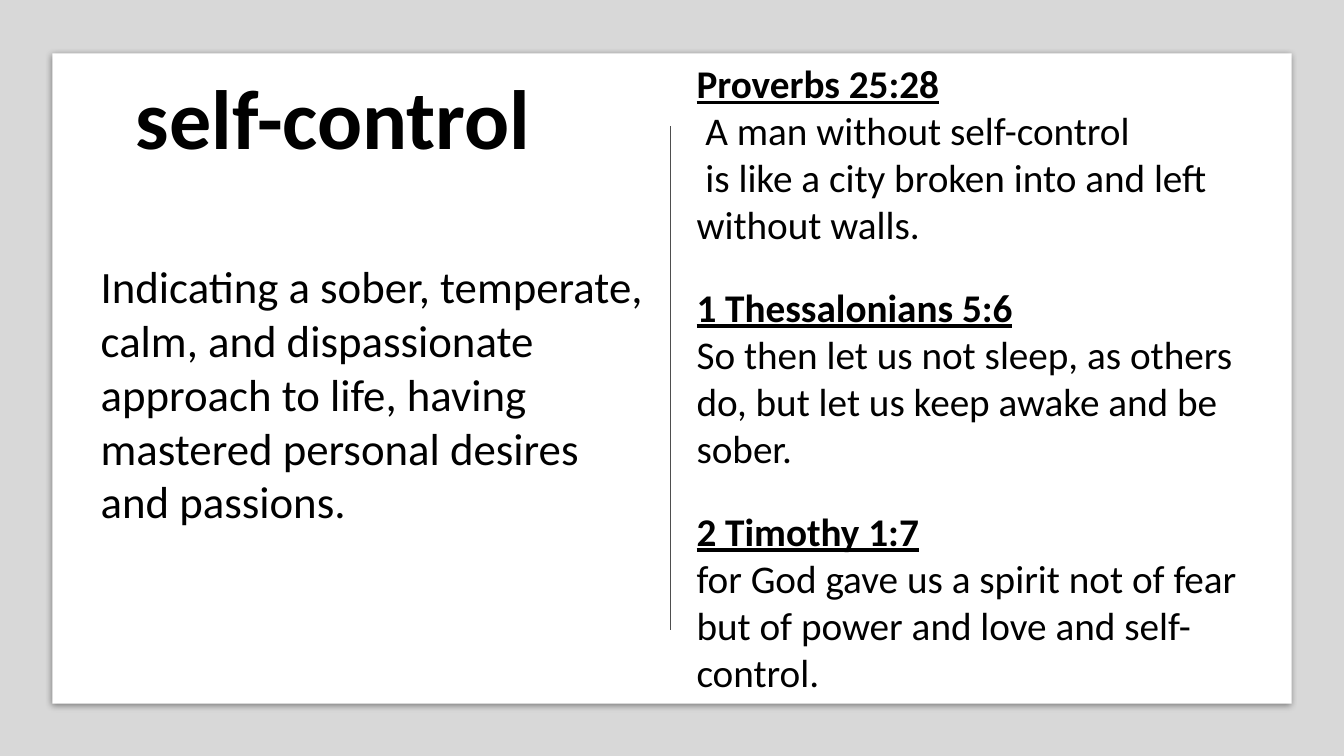
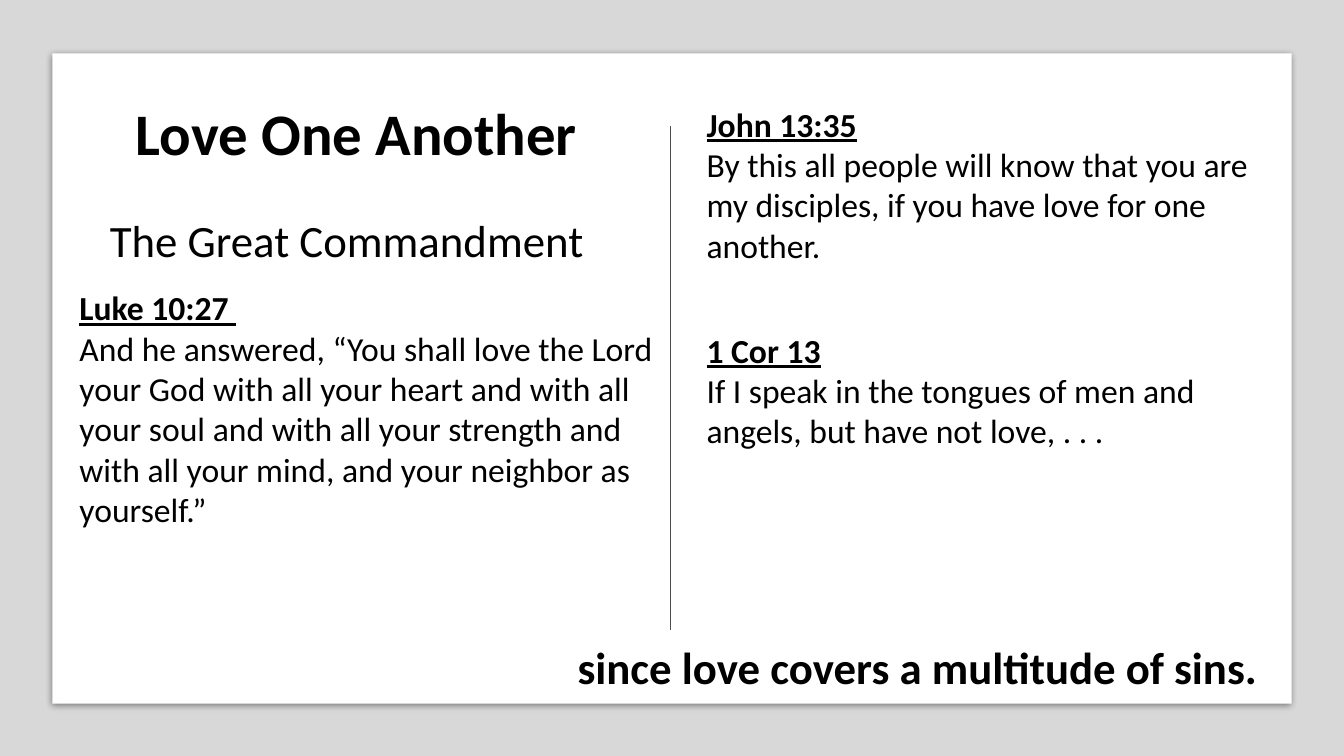
from lxml import etree
from pptx import Presentation
from pptx.dml.color import RGBColor
from pptx.enum import shapes, text
from pptx.oxml import parse_xml
from pptx.oxml.ns import nsdecls, qn
from pptx.util import Pt

PX = 9144  # 100 px to the inch
BLACK, WHITE, GRAY, RULE = "000000", "FFFFFF", "808080", "4E4E4E"
HEAD = {"bold": True, "underline": True}
BOLD = {"bold": True}
PLAIN = {}
SHADE = (
    f'<a:effectLst {nsdecls("a")}><a:outerShdw blurRad="63500" dist="17780" '
    'dir="5400000" rotWithShape="0"><a:srgbClr val="000000">'
    '<a:alpha val="43000"/></a:srgbClr></a:outerShdw></a:effectLst>'
)


def color(code):
    return RGBColor.from_string(code)


def write(slide, box, size, paras, title=False, line=1.0):
    """Add a text box; paras holds (words, font style) pairs."""
    area = slide.shapes.add_textbox(*(n * PX for n in box))
    frame = area.text_frame
    frame.word_wrap = True
    frame.auto_size = (text.MSO_AUTO_SIZE.NONE if title
                       else text.MSO_AUTO_SIZE.SHAPE_TO_FIT_TEXT)
    if title:
        frame.vertical_anchor = text.MSO_ANCHOR.BOTTOM
    for i, (words, style) in enumerate(paras):
        para = frame.paragraphs[0] if i == 0 else frame.add_paragraph()
        para.text = words
        if title:
            para.line_spacing, para.space_after = line, Pt(6)
        for run in para.runs:
            looks = {"name": "Calibri", "size": Pt(size), **style}
            for key, val in looks.items():
                setattr(run.font, key, val)
            run.font.color.rgb = color(BLACK)


# Content: title (words, size, line spacing), notes (box, size, words, style),
# verses (box, size, reference, words)
pages = [
    {
        "title": ("self-control", 60, 0.8),
        "notes": [
            ((90, 252, 559, 279), 32,
             "Indicating a sober, temperate, calm, and dispassionate approach "
             "to life, having mastered personal desires and passions.", PLAIN),
        ],
        "verses": [
            ((681, 54 + 222 * i, 581, 199), 28, ref, words)
            for i, (ref, words) in enumerate([
                ("Proverbs 25:28",
                 " A man without self-control\v is like a city broken into "
                 "and left without walls."),
                ("1 Thessalonians 5:6",
                 "So then let us not sleep, as others do, but let us keep "
                 "awake and be sober."),
                ("2 Timothy 1:7",
                 "for God gave us a spirit not of fear but of power and love "
                 "and self-control."),
            ])
        ],
    },
    {
        "title": ("Love One Another", 42, 0.7),
        "notes": [
            ((99, 206, 559, 64), 32, "The Great Commandment", PLAIN),
            ((563, 630, 718, 64), 32,
             "since love covers a multitude of sins.", BOLD),
        ],
        "verses": [
            ((69, 280, 596, 252), 24, "Luke 10:27 ",
             "And he answered, “You shall love the Lord your God with all "
             "your heart and with all your soul and with all your strength "
             "and with all your mind, and your neighbor as yourself.”"),
            ((691, 98, 563, 172), 24, "John 13:35",
             "By this all people will know that you are my disciples, if you "
             "have love for one another."),
            ((691, 322, 563, 131), 24, "1 Cor 13",
             "If I speak in the tongues of men and angels, but have not "
             "love, . . ."),
        ],
    },
]

deck = Presentation()
deck.slide_width, deck.slide_height = 1333 * PX, 750 * PX

for page in pages:
    slide = deck.slides.add_slide(deck.slide_layouts[6])

    # Gray backdrop and white card
    panels = []
    for box, fill in (((0, 0, 1333, 750), GRAY), ((52, 53, 1229, 645), WHITE)):
        panel = slide.shapes.add_shape(
            shapes.MSO_SHAPE.RECTANGLE, *(n * PX for n in box))
        panel.fill.solid()
        panel.fill.fore_color.rgb = color(fill)
        panel.line.fill.background()
        panel.shadow.inherit = False
        panels.append(panel)
    back, card = panels
    tint = back.fill._xPr.find(qn("a:solidFill"))[0]
    etree.SubElement(tint, qn("a:alpha")).set("val", "30000")
    props = card._element.spPr
    props.replace(props.find(qn("a:effectLst")), parse_xml(SHADE))

    # Middle rule
    rule = slide.shapes.add_connector(
        shapes.MSO_CONNECTOR.STRAIGHT, 665 * PX, 125 * PX, 665 * PX, 625 * PX)
    rule.line.color.rgb = color(RULE)
    rule.line.width = Pt(0.5)
    etree.SubElement(rule._element.spPr, qn("a:effectLst"))

    # Title, notes and verses
    words, size, line = page["title"]
    write(slide, (125, 71, 508, 98), size, [(words, BOLD)], True, line)
    for box, size, words, style in page["notes"]:
        write(slide, box, size, [(words, style)])
    for box, size, ref, words in page["verses"]:
        write(slide, box, size, [(ref, HEAD), (words, PLAIN)])

deck.save("out.pptx")
